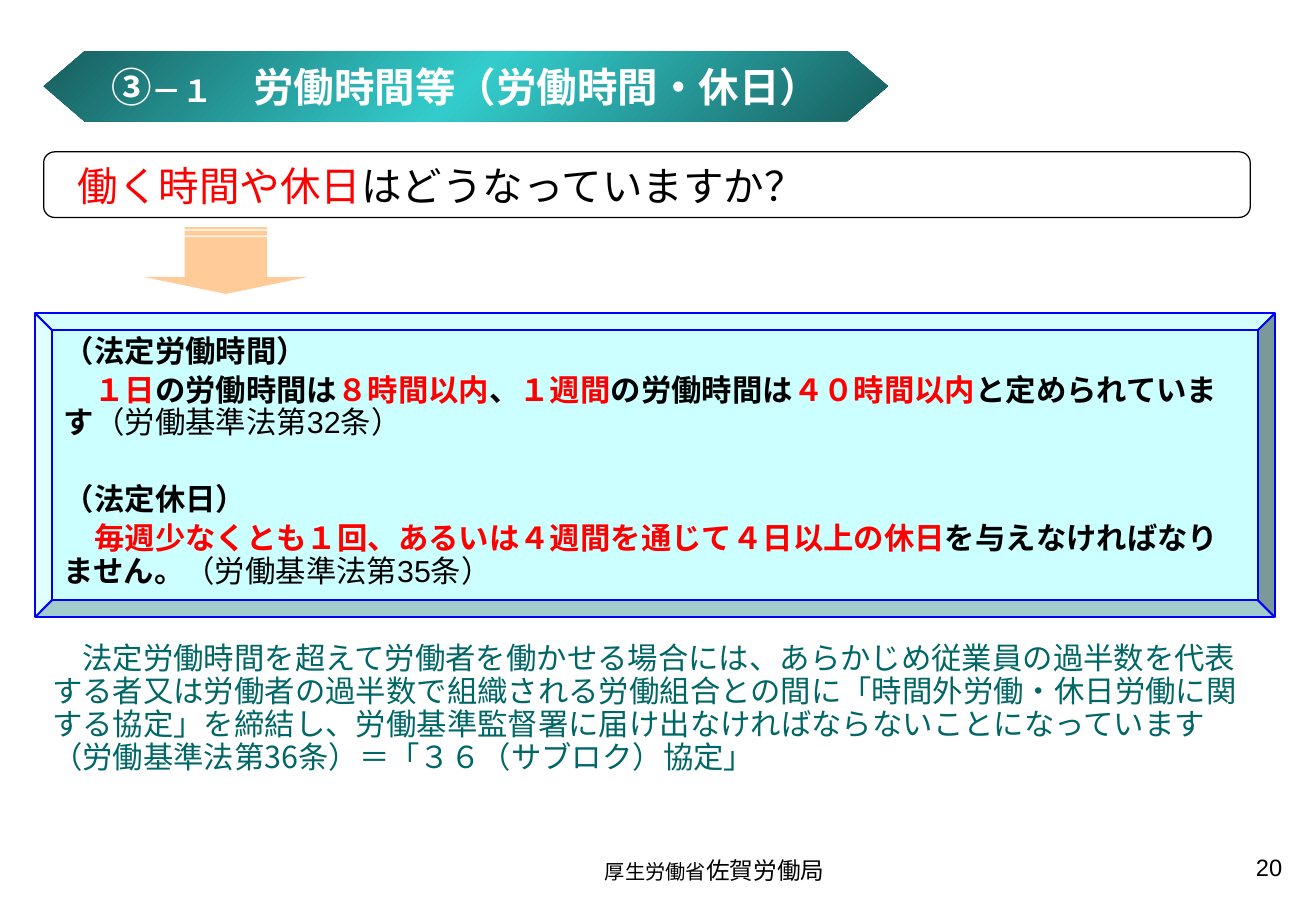
from pptx import Presentation
from pptx.dml.color import RGBColor
from pptx.enum.shapes import MSO_SHAPE as Shape
from pptx.enum.text import MSO_ANCHOR as Anchor, PP_ALIGN as Align
from pptx.oxml import parse_xml
from pptx.oxml.ns import nsdecls, qn
from pptx.util import Inches, Pt

THEME = {
    "black": "000000", "white": "FFFFFF", "red": "FF0000", "teal": "006666",
    "peach": "FFCC99", "ice": "CCFFFF", "blue": "0000FF",
    "dark": "185E5E", "bright": "33CCCC",
    "latin": "Arial", "asian": "Noto Sans CJK JP", "serif": "TeX Gyre Pagella",
    "heading": 24, "subheading": 18, "body": 18, "page": 14, "footer": 12,
}

deck = Presentation()
deck.slide_width, deck.slide_height = Inches(10.83), Inches(7.5)
page = deck.slides.add_slide(deck.slide_layouts[6])


def place(left, top, width, height):
    across, down = deck.slide_width / 100, deck.slide_height / 100
    return [round(v) for v in (left * across, top * down, width * across, height * down)]


def write(box, paragraphs, frame_format, para_format):
    frame = box.text_frame
    for name, value in {"word_wrap": True, **frame_format}.items():
        setattr(frame, name, value)
    for index, (runs, extra) in enumerate(paragraphs):
        para = frame.add_paragraph() if index else frame.paragraphs[0]
        for name, value in {"alignment": Align.LEFT, **para_format, **extra}.items():
            setattr(para, name, value)
        for text, size, color, bold, font in runs:
            span = para.add_run()
            span.text = text
            look = {"size": Pt(THEME[size]), "bold": bold, "name": THEME[font]}
            for name, value in look.items():
                setattr(span.font, name, value)
            span.font.color.rgb = RGBColor.from_string(THEME[color])
            east = span.font._element.makeelement(qn("a:ea"), {"typeface": THEME["asian"]})
            span.font._element.append(east)


panels = {}
for name, kind, area, adjust, fill, line, weight in [
    ("question", Shape.ROUNDED_RECTANGLE, (3.32, 16.67, 91.69, 7.2), 0.167, None, "black", 0.75),
    ("title", Shape.HEXAGON, (3.32, 5.6, 64.17, 7.73), 0.583, None, None, 0),
    ("rules", Shape.BEVEL, (2.68, 34.4, 94.18, 33.33), 0.055, "ice", "blue", 1.25),
]:
    panel = panels[name] = page.shapes.add_shape(kind, *place(*area))
    panel.shadow.inherit = False
    panel.adjustments[0] = adjust
    if fill:
        panel.fill.solid()
        panel.fill.fore_color.rgb = RGBColor.from_string(THEME[fill])
    else:
        panel.fill.background()
    if line:
        panel.line.color.rgb = RGBColor.from_string(THEME[line])
        panel.line.width = Pt(weight)
    else:
        panel.line.fill.background()

stops = "".join(
    f'<a:gs pos="{share * 1000}"><a:srgbClr val="{THEME[color]}"/></a:gs>'
    for share, color in [(0, "dark"), (50, "bright"), (100, "dark")]
)
title_properties = panels["title"]._element.spPr
title_properties.replace(
    title_properties.find(qn("a:noFill")),
    parse_xml(f'<a:gradFill {nsdecls("a")} rotWithShape="1"><a:gsLst>{stops}</a:gsLst>'
              '<a:lin ang="2700000" scaled="1"/></a:gradFill>'),
)

middle, shaft, head = 1717, 313, 627
left, right = middle - shaft, middle + shaft
outlines = [
    [(middle + head, 3040), (right, 3040), (right, 2600), (left, 2600),
     (left, 3040), (middle - head, 3040), (middle, 3227)],
]
for top, bottom in [(2533, 2587), (2493, 2520)]:
    outlines.append([(right, top), (left, top), (left, bottom), (right, bottom)])
scale = (deck.slide_width / 10000, deck.slide_height / 10000)
pen = page.shapes.build_freeform(*outlines[0][0], scale=scale)
for index, outline in enumerate(outlines):
    if index:
        pen.move_to(*outline[0])
    pen.add_line_segments(outline[1:], close=True)
arrow = pen.convert_to_shape()
arrow.shadow.inherit = False
arrow.fill.solid()
arrow.fill.fore_color.rgb = RGBColor.from_string(THEME["peach"])
arrow.line.fill.background()

write(panels["title"], [([
    ("③", "heading", "white", True, "latin"),
    ("－１", "subheading", "white", True, "latin"),
    ("　労働時間等（労働時間・休日）", "heading", "white", True, "latin"),
], {})], {"vertical_anchor": Anchor.MIDDLE, "word_wrap": False}, {"alignment": Align.CENTER})

plain = ("body", "black", False, "latin")
strong = ("body", "black", True, "latin")
accent = ("body", "red", True, "latin")
caption = ("body", "black", True, "asian")
write(panels["rules"], [
    ([("（法定労働時間）", *caption)], {}),
    ([("　", *plain), ("１日", *accent), ("の労働時間は", *strong),
      ("８時間以内", *accent), ("、", *strong), ("１週間", *accent),
      ("の労働時間は", *strong), ("４０時間以内", *accent),
      ("と定められています", *strong), ("（労働基準法第32条）", *plain)], {}),
    ([("（法定休日）", *caption)], {"space_before": Pt(26)}),
    ([("　", *plain),
      ("毎週少なくとも１回、あるいは４週間を通じて４日以上の休日", *accent),
      ("を与えなければなりません。", *strong), ("（労働基準法第35条）", *plain)], {}),
], {"vertical_anchor": Anchor.TOP}, {"line_spacing": 0.9, "space_before": Pt(3.6)})

note = ("body", "teal", False, "serif")
note_digits = ("body", "teal", False, "asian")
for area, runs, frame_format, para_format in [
    ((4.99, 17.73, 90.03, 6.13),
     [("働く時間や休日", "heading", "red", False, "latin"),
      ("はどうなっていますか？", "heading", "black", False, "latin")],
     {"vertical_anchor": Anchor.MIDDLE}, {"line_spacing": 0.8}),
    ((45.06, 93.33, 22.53, 4.4),
     [("厚生労働省", "footer", "black", False, "latin"),
      ("佐賀労働局", "page", "black", False, "latin")], {}, {}),
    ((3.05, 70, 93.54, 15.87),
     [("　", *note_digits),
      ("法定労働時間を超えて労働者を働かせる場合には、あらかじめ従業員の過半数を代表する者又は"
       "労働者の過半数で組織される労働組合との間に「時間外労働・休日労働に関する協定」を締結し、"
       "労働基準監督署に届け出なければならないことになっています（労働基準法第", *note),
      ("36", *note_digits), ("条）＝「３６（サブロク）協定」", *note)],
     {}, {"line_spacing": 0.9}),
    ((74.98, 92.93, 23.36, 6.93),
     [("20", "page", "black", False, "latin")], {}, {"alignment": Align.RIGHT}),
]:
    box = page.shapes.add_textbox(*place(*area))
    write(box, [(runs, {})], frame_format, para_format)

deck.save("out.pptx")
